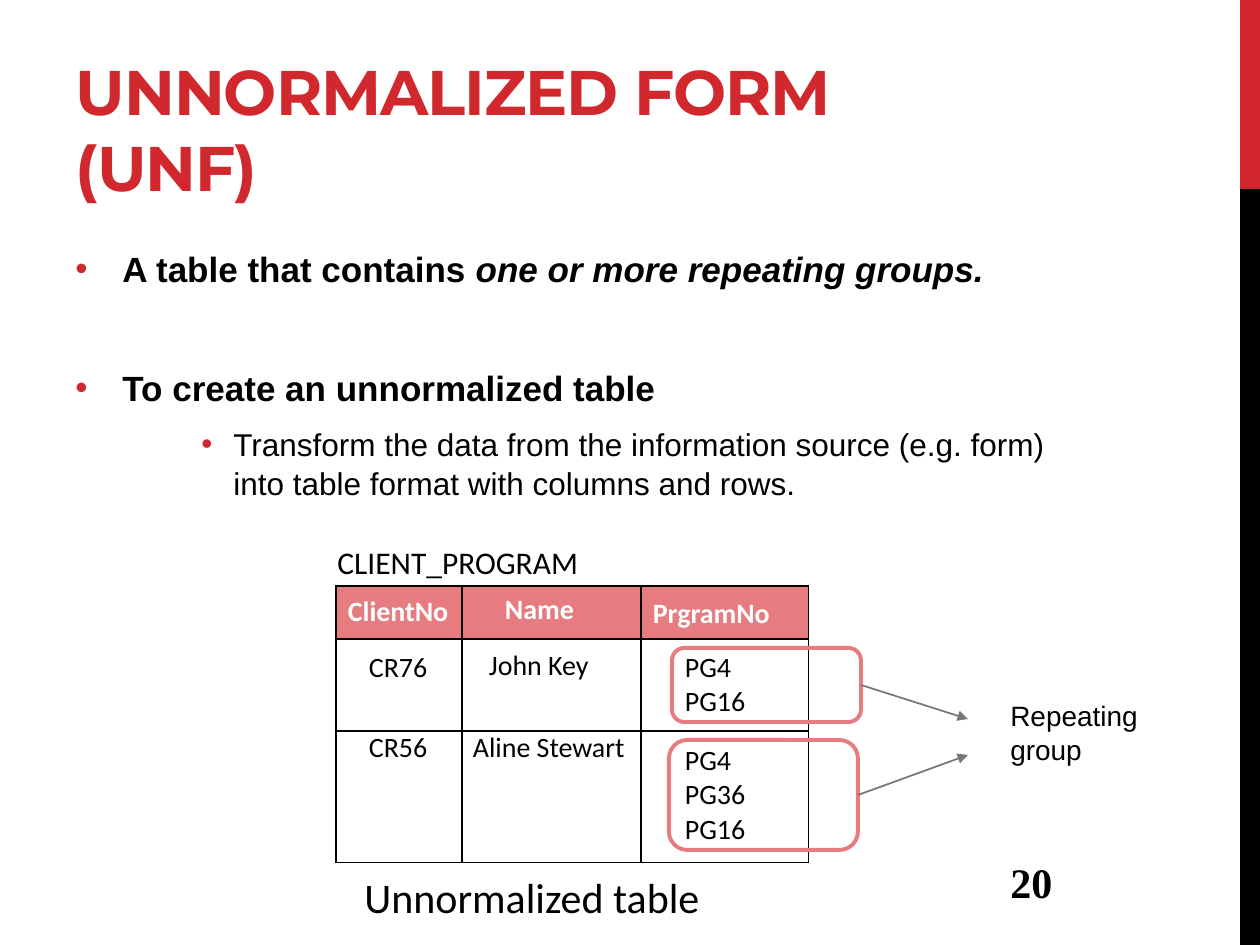
from lxml.etree import SubElement
from pptx import Presentation
from pptx.dml.color import RGBColor as RGB
from pptx.enum.shapes import MSO_CONNECTOR as CONN, MSO_SHAPE as SHAPE
from pptx.enum.text import MSO_ANCHOR as ANCHOR, MSO_AUTO_SIZE as AUTO, PP_ALIGN as ALIGN
from pptx.oxml import parse_xml
from pptx.oxml.ns import nsdecls, qn
from pptx.util import Emu, Pt

THEME = {
    "red": RGB(0xD1, 0x28, 0x2E), "pink": RGB(0xE6, 0x7C, 0x7F),
    "black": RGB(0, 0, 0), "white": RGB(255, 255, 255), "gray": RGB(0x77, 0x77, 0x77),
    "title": 36, "caption": 24, "bullet": 20, "sub": 18, "cell": 16,
}


def px(n):
    """Convert pixels, 126 to the inch, to EMU."""
    return Emu(round(n * 914400 / 126))


def add_run(p, text, size, font="Arial", color="black", **extra):
    r = p.add_run()
    r.text = text
    r.font.color.rgb = THEME[color]
    for name, value in {"size": Pt(THEME[size]), "name": font, **extra}.items():
        setattr(r.font, name, value)
    return r


prs = Presentation()
prs.slide_width, prs.slide_height = px(1260), px(945)
s = prs.slides.add_slide(prs.slide_layouts[5])

# Side bar
for top, height, color in ((0, 189, "red"), (189, 756, "black")):
    sp = s.shapes.add_shape(SHAPE.RECTANGLE, px(1240), px(top), px(20), px(height))
    sp.shadow.inherit = False
    sp.fill.solid()
    sp.fill.fore_color.rgb = THEME[color]
    sp.line.fill.background()

# Title
title = s.shapes.title
for name, value in {"left": 63, "top": 21, "width": 964, "height": 189}.items():
    setattr(title, name, px(value))
tf = title.text_frame
for name, value in {"word_wrap": True, "auto_size": AUTO.NONE,
                    "vertical_anchor": ANCHOR.BOTTOM}.items():
    setattr(tf, name, value)
p = tf.paragraphs[0]
p.alignment = ALIGN.LEFT
r = add_run(p, "UNNORMALIZED FORM (UNF)", "title", "Montserrat", "red", bold=True)
r.font._element.set("spc", "-60")

# Bullets: runs, type size, indent and hanging in px, space before and after in pt
bullets = (
    ([("A table that contains ", {"bold": True}),
      ("one or more repeating groups.", {"bold": True, "italic": True})], "bullet", 47, 47, 4, 6),
    ([("To create an unnormalized table", {"bold": True})], "bullet", 47, 47, 37, 6),
    ([("Transform the data from the information source (e.g. form) "
       "into table format with columns and rows.", {})], "sub", 158, 32, 2, 0),
)
tf = s.shapes.add_textbox(px(63), px(239), px(1050), px(290)).text_frame
tf.word_wrap = True
for i, (runs, size, indent, hanging, before, after) in enumerate(bullets):
    p = tf.add_paragraph() if i else tf.paragraphs[0]
    for name, value in {"space_before": Pt(before), "space_after": Pt(after),
                        "line_spacing": 1.05}.items():
        setattr(p, name, value)
    pPr = p._p.get_or_add_pPr()
    pPr.set("marL", str(px(indent)))
    pPr.set("indent", str(-px(hanging)))
    color = SubElement(pPr, qn("a:buClr"))
    SubElement(color, qn("a:srgbClr"), val=str(THEME["red"]))
    SubElement(pPr, qn("a:buFont"), typeface="Arial")
    SubElement(pPr, qn("a:buChar"), char="•")
    for text, style in runs:
        add_run(p, text, size, **style)

# Client table: each cell has its lines, left inset and top inset in px
rows = (
    (53, ((["ClientNo"], 12, 9), (["Name"], 43, 7), (["PrgramNo"], 12, 11))),
    (92, ((["CR76"], 33, 12), (["John Key"], 27, 10), (["PG4", "PG16"], 44, 12))),
    (132, ((["CR56"], 33, 0), (["Aline Stewart"], 11, 0), (["PG4", "PG36", "PG16"], 44, 13))),
)
widths = (126, 179, 168)
table = s.shapes.add_table(len(rows), len(widths), px(336), px(586),
                           px(sum(widths)), px(sum(h for h, _ in rows))).table
table.horz_banding = False
for col, width in zip(table.columns, widths):
    col.width = px(width)
for i, (height, cells) in enumerate(rows):
    table.rows[i].height = px(height)
    for j, (lines, left, top) in enumerate(cells):
        cell = table.cell(i, j)
        cell.fill.solid()
        cell.fill.fore_color.rgb = THEME["white" if i else "pink"]
        for name, value in {"margin_left": left, "margin_top": top,
                            "margin_right": 0, "margin_bottom": 0}.items():
            setattr(cell, name, px(value))
        for k, text in enumerate(lines):
            p = cell.text_frame.add_paragraph() if k else cell.text_frame.paragraphs[0]
            add_run(p, text, "cell", "Calibri", "black" if i else "white", bold=not i)
        tcPr = cell._tc.get_or_add_tcPr()
        for k, side in enumerate("LRTB"):
            tcPr.insert(k, parse_xml(
                f'<a:ln{side} {nsdecls("a")} w="9525"><a:solidFill>'
                f'<a:srgbClr val="{THEME["black"]}"/></a:solidFill></a:ln{side}>'))

# Frames round the repeating groups, each with an arrow to the label
groups = (
    ((672, 648, 189, 74), (861, 685, 968, 719)),
    ((669, 740, 189, 110), (858, 795, 968, 755)),
)
for frame, arrow in groups:
    sp = s.shapes.add_shape(SHAPE.ROUNDED_RECTANGLE, *map(px, frame))
    sp.shadow.inherit = False
    sp.fill.background()
    sp.line.color.rgb = THEME["pink"]
    sp.line.width = Pt(2.25)
    line = s.shapes.add_connector(CONN.STRAIGHT, *map(px, arrow))
    line.line.color.rgb = THEME["gray"]
    line.line.width = Pt(1)
    SubElement(line.line._get_or_add_ln(), qn("a:tailEnd"), type="triangle")
    SubElement(line._element.spPr, qn("a:effectLst"))

# Labels
labels = (
    ("CLIENT_PROGRAM", (325, 537, 268, 50), "sub", "Calibri", False),
    ("Repeating group", (998, 692, 169, 81), "cell", "Arial", False),
    ("Unnormalized table", (352, 865, 364, 63), "caption", "Calibri", False),
    ("20", (998, 850, 262, 63), "caption", "Times New Roman", True),
)
for text, box, size, font, bold in labels:
    tf = s.shapes.add_textbox(*map(px, box)).text_frame
    tf.word_wrap = True
    tf.vertical_anchor = ANCHOR.MIDDLE
    add_run(tf.paragraphs[0], text, size, font, bold=bold)

prs.save("out.pptx")
